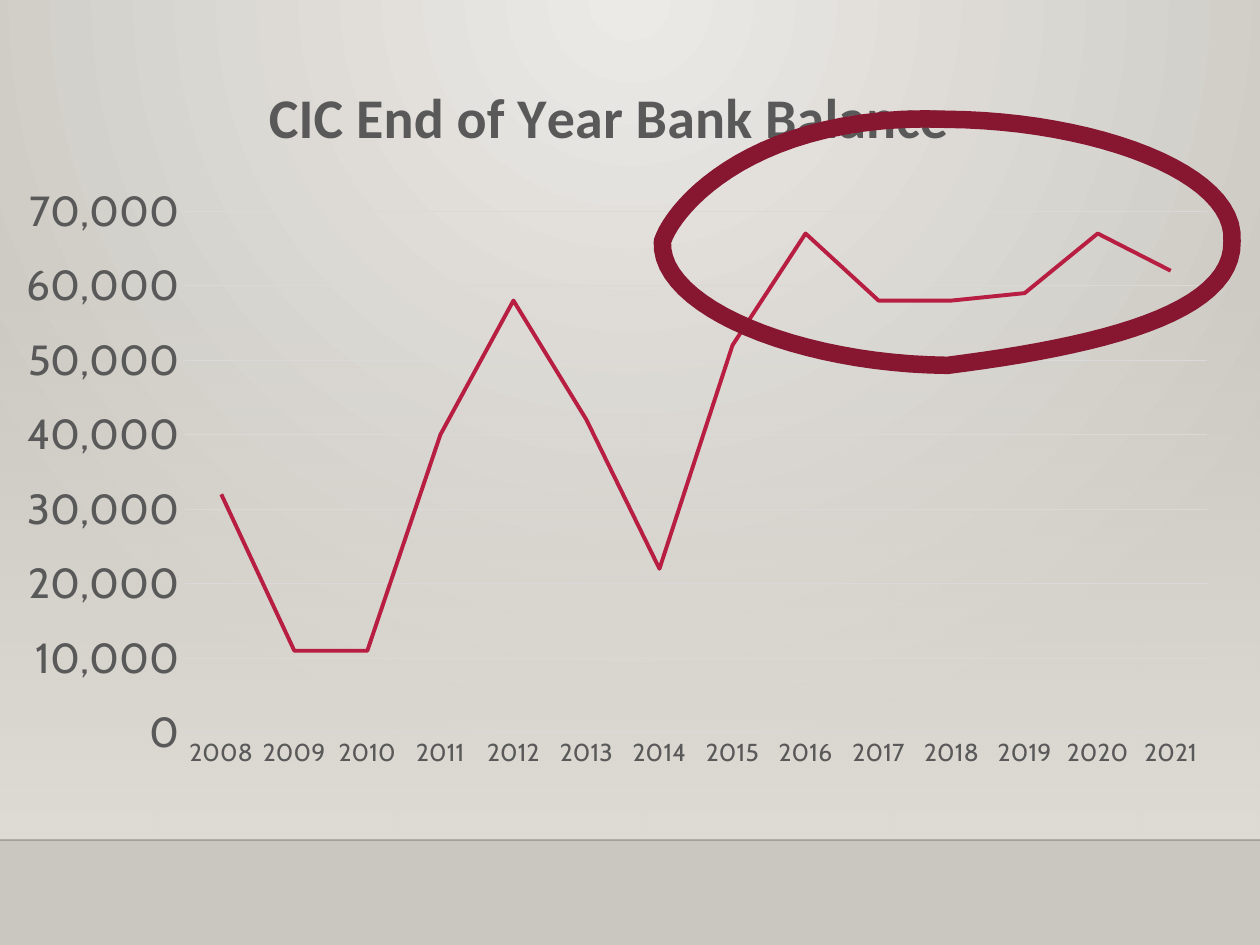
from lxml.etree import SubElement
from pptx import Presentation
from pptx.chart.data import CategoryChartData
from pptx.dml.color import RGBColor
from pptx.enum.chart import XL_CHART_TYPE as ChartType, XL_TICK_MARK as TickMark
from pptx.enum.shapes import MSO_CONNECTOR as Connector, MSO_SHAPE as Shape
from pptx.oxml.ns import qn
from pptx.util import Pt

GLOW = RGBColor(0xEC, 0xEA, 0xE7)
STONE = RGBColor(0xCA, 0xC7, 0xC1)
SAND = RGBColor(0xDF, 0xDB, 0xD5)
BLACK = RGBColor(0, 0, 1)
GREY = RGBColor(0x59, 0x59, 0x59)
PALE = RGBColor(0xD9, 0xD9, 0xD9)
CRIMSON = RGBColor(0xB7, 0x1E, 0x42)
MAROON = RGBColor(0x87, 0x16, 0x31)

BALANCES = {
    "2008": 32000, "2009": 11000, "2010": 11000, "2011": 40000, "2012": 58000,
    "2013": 42000, "2014": 22000, "2015": 52000, "2016": 67000, "2017": 58000,
    "2018": 58000, "2019": 59000, "2020": 67000, "2021": 62000,
}
RING_START = (378.5, 138)
RING_CURVES = [
    ((386, 116), (433.5, 64), (541.5, 68.2)),
    ((625, 69), (707, 98.5), (704, 138)),
    ((705, 179.5), (627, 198), (541.5, 208.8)),
    ((456.5, 208), (376.5, 175.5), RING_START),
]


class BalanceSlide:
    """Draws styled elements on one slide, with all lengths in points."""

    body_font = "Cabin"
    title_font = "Calibri"

    def __init__(self, deck):
        self.slide = deck.slides.add_slide(deck.slide_layouts[6])

    def set_alpha(self, element, percent):
        for color in element.iter(qn("a:srgbClr")):
            SubElement(color, qn("a:alpha"), val=str(percent * 1000))

    def gradient(self, fill, start, end):
        fill.gradient()
        for stop, color, position in zip(fill.gradient_stops, (start, end), (0, 1)):
            stop.color.rgb = color
            stop.position = position

    def backdrop(self, center, edge):
        self.gradient(self.slide.background.fill, center, edge)
        grad = next(self.slide._element.iter(qn("a:gradFill")))
        grad.remove(grad.find(qn("a:lin")))
        circle = SubElement(grad, qn("a:path"), path="circle")
        SubElement(circle, qn("a:fillToRect"), l="43000", t="0", r="43000", b="100000")

    def veil(self, left, top, width, height, color):
        veil = self.slide.shapes.add_shape(
            Shape.RECTANGLE, Pt(left), Pt(top), Pt(width), Pt(height))
        veil.shadow.inherit = False
        veil.line.fill.background()
        self.gradient(veil.fill, color, color)
        veil.fill.gradient_angle = 270
        self.set_alpha(next(veil._element.iter(qn("a:gs"))), 0)

    def divider(self, y, width, color, alpha):
        divider = self.slide.shapes.add_connector(
            Connector.STRAIGHT, Pt(0), Pt(y), Pt(width), Pt(y))
        divider.line.color.rgb = color
        divider.line.width = Pt(1)
        properties = divider._element.spPr
        self.set_alpha(properties, alpha)
        SubElement(properties, qn("a:effectLst"))

    def set_font(self, font, name, size, color, bold=False):
        font.name, font.size, font.bold = name, Pt(size), bold
        font.color.rgb = color

    def set_line(self, line, color, width):
        line.color.rgb = color
        line.width = Pt(width)

    def place(self, parent, index, **fractions):
        for old in parent.findall(qn("c:layout")):
            parent.remove(old)
        layout = SubElement(parent, qn("c:layout"))
        parent.insert(index, layout)
        manual = SubElement(layout, qn("c:manualLayout"))
        if "w" in fractions:
            SubElement(manual, qn("c:layoutTarget"), val="inner")
        for key in ("x", "y"):
            SubElement(manual, qn(f"c:{key}Mode"), val="edge")
        for key, value in fractions.items():
            SubElement(manual, qn(f"c:{key}"), val=str(value))

    def style_axis(self, axis, size):
        axis.major_tick_mark = axis.minor_tick_mark = TickMark.NONE
        self.set_font(axis.tick_labels.font, self.body_font, size, GREY)

    def balance_chart(self, left, top, width, height, title, balances):
        data = CategoryChartData(number_format="#,##0")
        data.categories = list(balances)
        data.add_series("Series 1", list(balances.values()))
        chart = self.slide.shapes.add_chart(
            ChartType.LINE, Pt(left), Pt(top), Pt(width), Pt(height), data).chart
        chart.has_legend = False
        self.set_font(chart.font, self.body_font, 10, BLACK)

        heading = chart.chart_title.text_frame.paragraphs[0].add_run()
        heading.text = title
        self.set_font(heading.font, self.title_font, 32, GREY, bold=True)
        self.place(chart.chart_title._element, 1, x=0.21, y=0.03)
        self.place(next(chart._chartSpace.iter(qn("c:plotArea"))), 0,
                   x=0.15, y=0.225, w=0.83, h=0.708)

        years, amounts = chart.category_axis, chart.value_axis
        self.style_axis(years, 14)
        self.set_line(years.format.line, PALE, 0.75)
        self.style_axis(amounts, 24)
        amounts.format.line.fill.background()
        amounts.minimum_scale, amounts.maximum_scale = 0, 70000
        amounts.major_unit = 10000
        amounts.tick_labels.number_format = "#,##0"
        amounts.tick_labels.number_format_is_linked = False
        self.set_line(amounts.major_gridlines.format.line, PALE, 0.75)

        chart.plots[0].vary_by_categories = False
        balance = chart.plots[0].series[0]
        balance.smooth = False
        self.set_line(balance.format.line, CRIMSON, 2.25)

    def ring(self, start, curves, color, width, steps=24):
        points, origin = [], start
        for first, second, end in curves:
            for step in range(1, steps + 1):
                t = step / steps
                u = 1 - t
                points.append(tuple(
                    Pt(u**3 * a + 3 * u * u * t * b + 3 * u * t * t * c + t**3 * d)
                    for a, b, c, d in zip(origin, first, second, end)))
            origin = end
        builder = self.slide.shapes.build_freeform(Pt(start[0]), Pt(start[1]))
        builder.add_line_segments(points, close=True)
        ring = builder.convert_to_shape()
        ring.shadow.inherit = False
        ring.fill.background()
        self.set_line(ring.line, color, width)


def main():
    deck = Presentation()
    deck.slide_width, deck.slide_height = Pt(720), Pt(540)
    page = BalanceSlide(deck)
    page.backdrop(GLOW, STONE)
    page.veil(0, 158.5, 720, 321.5, SAND)
    page.divider(480, 720, BLACK, 20)
    page.balance_chart(0, 26, 704, 421, "CIC End of Year Bank Balance", BALANCES)
    page.ring(RING_START, RING_CURVES, MAROON, 10)
    deck.save("out.pptx")


if __name__ == "__main__":
    main()
